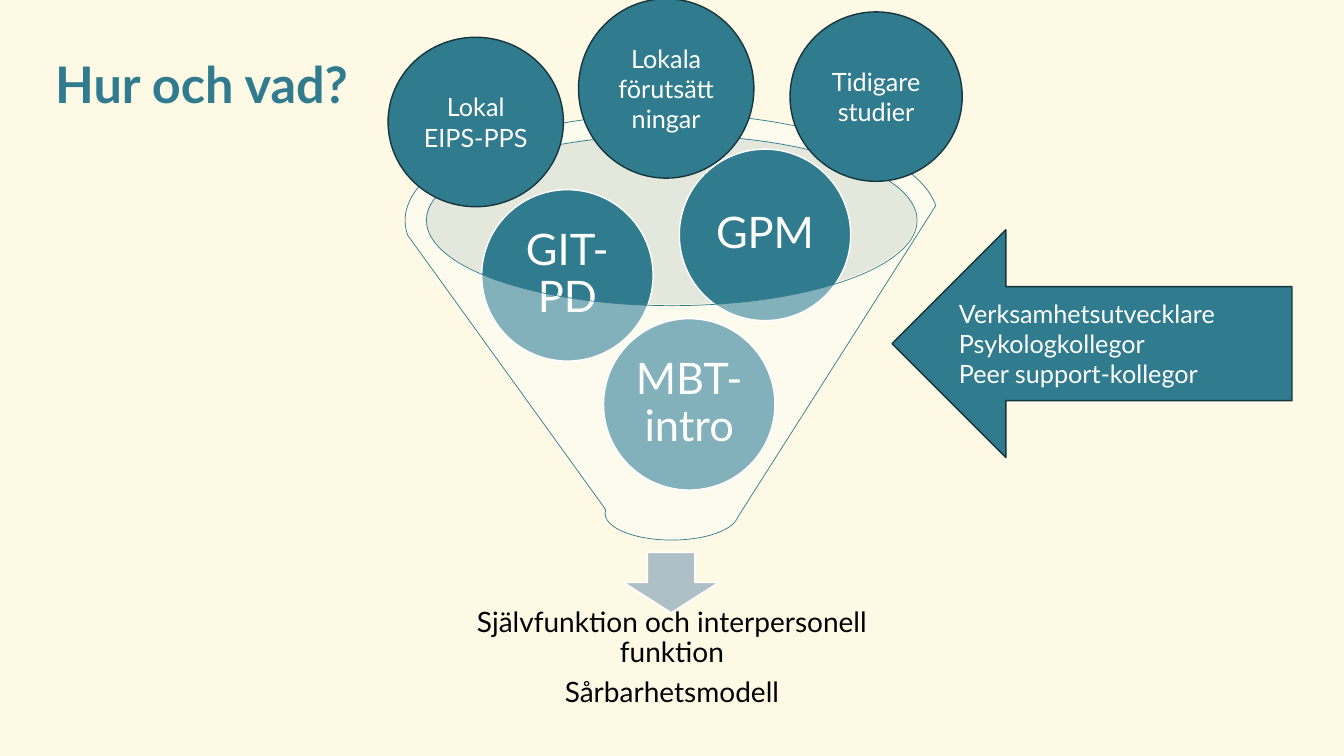
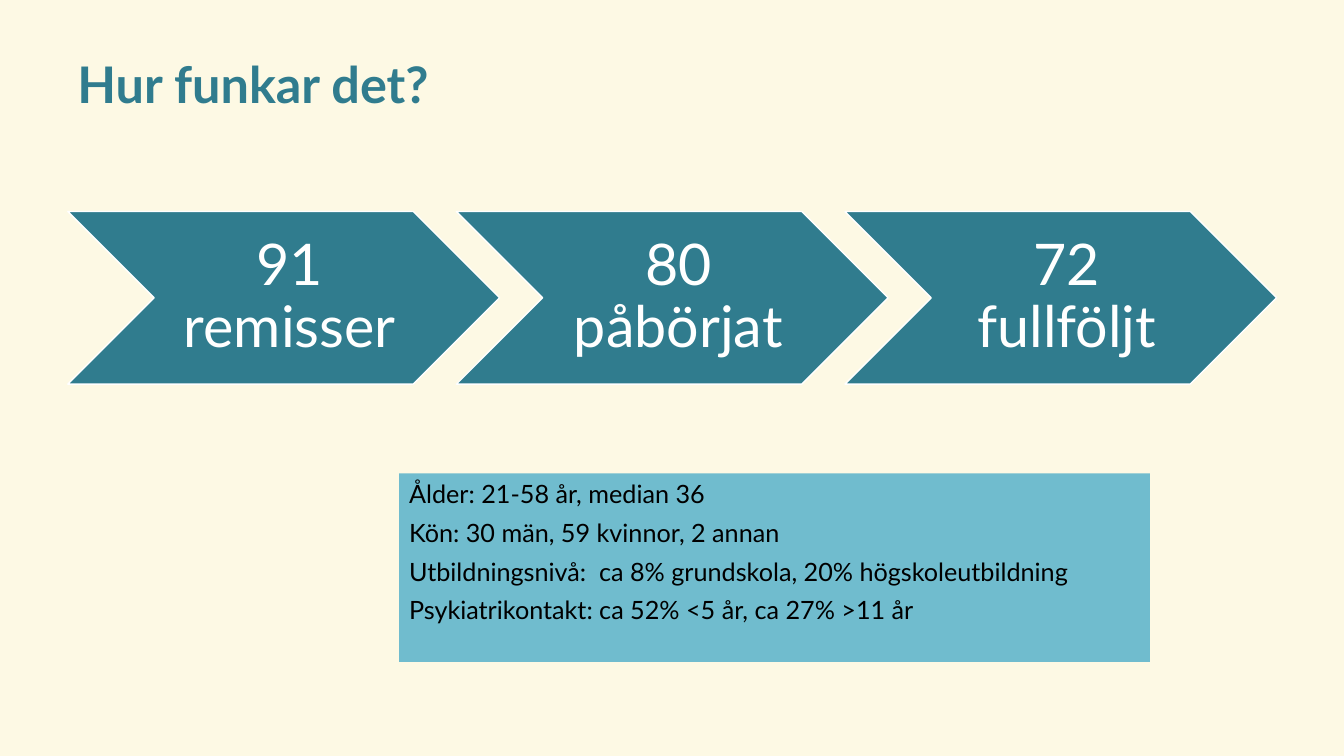
import pptx
import pptx.dml.color
import pptx.enum.shapes
import pptx.enum.text
import pptx.oxml.ns
import pptx.util
from lxml import etree

Cm = pptx.util.Cm
Pt = pptx.util.Pt
SHAPE = pptx.enum.shapes.MSO_SHAPE
ALIGN = pptx.enum.text.PP_ALIGN
ANCHOR = pptx.enum.text.MSO_ANCHOR

COLORS = {
    "cream": "FDF9E4",
    "teal": "307C8E",
    "dark": "15363E",
    "mist": "BECCD1",
    "steel": "AEBFC6",
    "sky": "70BCCE",
    "white": "FFFFFF",
    "black": "000000",
}
FONT = "Lato"
DEFAULT_INSETS = (0.25, 0.13, 0.25, 0.13)


def rgb(name):
    return pptx.dml.color.RGBColor.from_string(COLORS[name])


class Deck:
    """Holds the shared style and the slide being filled."""

    def __init__(self):
        self.prs = pptx.Presentation()
        self.prs.slide_width = Cm(33.87)
        self.prs.slide_height = Cm(19.05)
        background = self.prs.slide_master.background.fill
        background.solid()
        background.fore_color.rgb = rgb("cream")
        self.slide = None

    def new_slide(self, title, left):
        self.slide = self.prs.slides.add_slide(self.prs.slide_layouts[5])
        heading = self.slide.shapes.title
        heading.left, heading.top = Cm(left), Cm(0.99)
        heading.width, heading.height = Cm(30.8), Cm(2.08)
        self.add_text(heading, [title], 36, "teal", align=ALIGN.LEFT,
                      bold=True, line_spacing=1.1)

    def add_text(self, shape, lines, size, color="white", align=ALIGN.CENTER,
                 anchor=ANCHOR.MIDDLE, insets=DEFAULT_INSETS, bold=False,
                 line_spacing=1.0, before=0, after=0):
        """Fill a shape with one paragraph per line."""
        frame = shape.text_frame
        frame.word_wrap = True
        frame.vertical_anchor = anchor
        (frame.margin_left, frame.margin_top,
         frame.margin_right, frame.margin_bottom) = map(Cm, insets)
        for index, line in enumerate(lines):
            paragraph = frame.add_paragraph() if index else frame.paragraphs[0]
            paragraph.alignment = align
            paragraph.line_spacing = line_spacing
            paragraph.space_before = Pt(before if index else 0)
            paragraph.space_after = Pt(after)
            run = paragraph.add_run()
            run.text = line
            run.font.name = FONT
            run.font.size = Pt(size)
            run.font.bold = bold
            run.font.color.rgb = rgb(color)

    def add_compact_text(self, shape, lines, size, insets, color="white"):
        """Tight centred text, with space after in proportion to its size."""
        self.add_text(shape, lines, size, color, insets=insets,
                      line_spacing=0.9, after=round(0.35 * size))

    def shape(self, kind, box, fill, line=None, line_width=1, opacity=None):
        shape = self.slide.shapes.add_shape(kind, *map(Cm, box))
        shape.shadow.inherit = False
        shape.fill.solid()
        shape.fill.fore_color.rgb = rgb(fill)
        if opacity is not None:
            fill_xml = shape.element.spPr.find(pptx.oxml.ns.qn("a:solidFill"))
            alpha = etree.SubElement(fill_xml[0], pptx.oxml.ns.qn("a:alpha"))
            alpha.set("val", str(opacity * 1000))
        if line:
            shape.line.color.rgb = rgb(line)
            shape.line.width = Pt(line_width)
        else:
            shape.line.fill.background()
        return shape

    def textbox(self, box):
        return self.slide.shapes.add_textbox(*map(Cm, box))


def build_method_slide(deck):
    deck.new_slide("Hur och vad?", 1.14)
    deck.shape(SHAPE.OVAL, (10.72, 3.38, 12.37, 4.29), "mist", opacity=40)
    deck.shape(SHAPE.DOWN_ARROW, (15.72, 13.92, 2.39, 1.52), "steel", "white")
    outcome = deck.textbox((11.18, 15.27, 11.51, 2.64))
    deck.add_compact_text(
        outcome,
        ["Självfunktion och interpersonell funktion", "Sårbarhetsmodell"],
        20, (0.41,) * 4, "black")

    diameter = 4.32
    for method, left, top in (("MBT-intro", 15.21, 8.03),
                              ("GIT-PD", 12.14, 4.78),
                              ("GPM", 17.12, 3.76)):
        ball = deck.shape(SHAPE.OVAL, (left, top, diameter, diameter),
                          "teal", "white")
        deck.add_compact_text(ball, [method], 31, (0.1,) * 4)
    deck.shape(SHAPE.FUNNEL, (10.21, 2.87, 13.44, 10.74), "white", "teal",
               line_width=0.5, opacity=40)

    for source, box in (
            ("Lokal EIPS-PPS", (9.78, 0.94, 4.42, 4.27)),
            ("Tidigare studier", (19.91, 0.3, 4.34, 4.27)),
            ("Lokala förutsättningar", (14.58, -0.03, 4.42, 4.52))):
        circle = deck.shape(SHAPE.FLOWCHART_CONNECTOR, box, "teal", "dark")
        deck.add_text(circle, [source], 18)

    colleagues = deck.shape(SHAPE.LEFT_ARROW, (22.48, 5.79, 10.08, 5.74),
                            "teal", "dark")
    deck.add_text(colleagues,
                  ["Verksamhetsutvecklare", "Psykologkollegor",
                   "Peer support-kollegor"], 18, align=ALIGN.LEFT)


def build_results_slide(deck):
    deck.new_slide("Hur funkar det?", 1.7)
    width, overlap = 10.88, 0.1
    for index, stage in enumerate(("91 remisser", "80 påbörjat",
                                   "72 fullföljt")):
        left = 1.71 + index * width * (1 - overlap)
        chevron = deck.shape(SHAPE.CHEVRON, (left, 5.33, width, 4.35),
                             "teal", "white")
        deck.add_compact_text(chevron, [stage], 41, (0.46, 0.15, 0.15, 0.15))

    participants = deck.shape(SHAPE.RECTANGLE, (10.06, 11.93, 18.92, 4.75),
                              "sky")
    deck.add_text(participants,
                  ["Ålder: 21-58 år, median 36",
                   "Kön: 30 män, 59 kvinnor, 2 annan",
                   "Utbildningsnivå:  ca 8% grundskola, 20% högskoleutbildning",
                   "Psykiatrikontakt: ca 52% <5 år, ca 27% >11 år"],
                  18, "black", align=ALIGN.LEFT, anchor=ANCHOR.TOP, before=6)


def main():
    deck = Deck()
    build_method_slide(deck)
    build_results_slide(deck)
    deck.prs.save("out.pptx")


if __name__ == "__main__":
    main()
